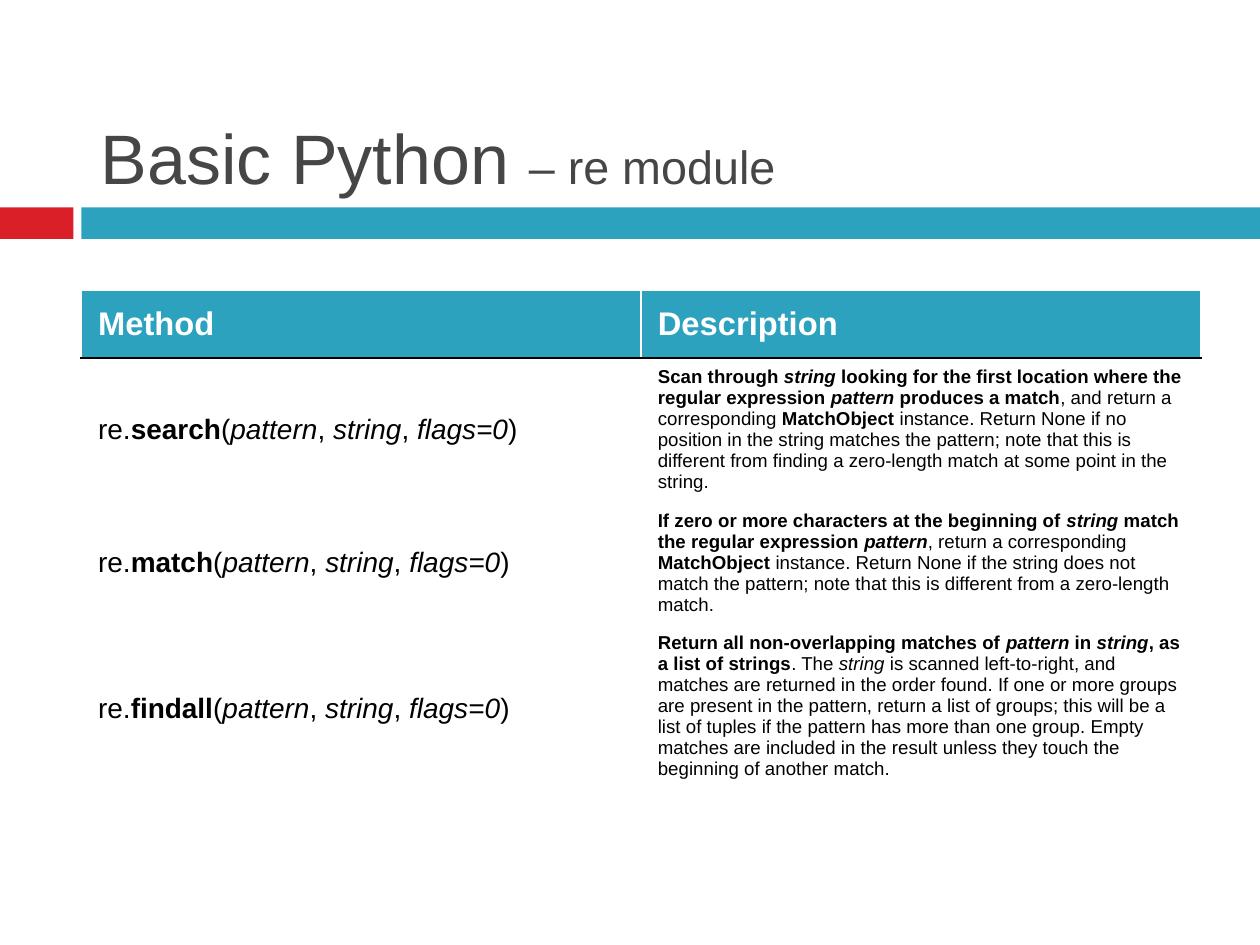
from lxml.etree import SubElement as Sub
from pptx import Presentation
from pptx.dml.color import RGBColor
from pptx.enum.shapes import MSO_SHAPE as Shape
from pptx.enum.text import MSO_ANCHOR as Anchor, MSO_AUTO_SIZE as Fit, PP_ALIGN as Align
from pptx.oxml.ns import qn
from pptx.util import Inches, Pt

RED = RGBColor(0xDA, 0x1F, 0x28)
TEAL = RGBColor(0x2D, 0xA2, 0xBF)
GREY = RGBColor(0x46, 0x46, 0x46)
BLACK = RGBColor(0, 0, 0)
WHITE = RGBColor(0xFF, 0xFF, 0xFF)

deck = Presentation()
deck.slide_width = Inches(7.5)
deck.slide_height = deck.slide_width * 3 // 4
slide = deck.slides.add_slide(deck.slide_layouts[5])


def area(x, y, w, h):
    wide, high = deck.slide_width / 100, deck.slide_height / 100
    return round(x * wide), round(y * high), round(w * wide), round(h * high)


def write(para, text, size=12, color=BLACK):
    for i, part in enumerate(text.split("*")):
        for j, bit in enumerate(part.split("_")):
            if bit:
                run = para.add_run()
                run.text = bit
                font = run.font
                font.name, font.size = "Arial", Pt(size)
                font.bold, font.italic = i % 2 == 1, j % 2 == 1
                font.color.rgb = color


LEFT = 6.45
for x, w, color in [(0, 5.83, RED), (LEFT, 100 - LEFT, TEAL)]:
    bar = slide.shapes.add_shape(Shape.RECTANGLE, *area(x, 21.96, w, 3.33))
    bar.shadow.inherit = False
    bar.fill.solid()
    bar.fill.fore_color.rgb = color
    bar.line.fill.background()

title = slide.shapes.title
title.left, title.top, title.width, title.height = area(6.67, 2.31, 89.2, 19.56)
frame = title.text_frame
frame.auto_size = Fit.NONE
frame.word_wrap = True
frame.vertical_anchor = Anchor.BOTTOM
head = frame.paragraphs[0]
head.alignment = Align.LEFT
write(head, "Basic Python ", size=30, color=GREY)
write(head, "– re module", size=20, color=GREY)

ARGS = "(_pattern_, _string_, _flags=0_)"
ROWS = [
    (7.11, "*Method*", "*Description*"),
    (15.3, "re.*search*" + ARGS,
     "*Scan through _string_ looking for the first location where the regular "
     "expression _pattern_ produces a match*, and return a corresponding "
     "*MatchObject* instance. Return None if no position in the string matches "
     "the pattern; note that this is different from finding a zero-length match "
     "at some point in the string."),
    (12.63, "re.*match*" + ARGS,
     "*If zero or more characters at the beginning of _string_ match the regular "
     "expression _pattern_*, return a corresponding *MatchObject* instance. "
     "Return None if the string does not match the pattern; note that this is "
     "different from a zero-length match."),
    (17.97, "re.*findall*" + ARGS,
     "*Return all non-overlapping matches of _pattern_ in _string_, as a list of "
     "strings*. The _string_ is scanned left-to-right, and matches are returned "
     "in the order found. If one or more groups are present in the pattern, "
     "return a list of groups; this will be a list of tuples if the pattern has "
     "more than one group. Empty matches are included in the result unless they "
     "touch the beginning of another match."),
]
high = sum(row[0] for row in ROWS)
table = slide.shapes.add_table(len(ROWS), 2, *area(LEFT, 30.74, 88.86, high)).table
table.horz_banding = False
for r, (share, *texts) in enumerate(ROWS):
    table.rows[r].height = area(0, 0, 0, share)[3]
    for c, text in enumerate(texts):
        cell = table.cell(r, c)
        for side in "LRTB":
            dark = (r, side) in [(0, "B"), (1, "T")]
            edge = Sub(cell._tc.get_or_add_tcPr(), qn("a:ln" + side), w=str(Pt(1)))
            fill = Sub(edge, qn("a:solidFill"))
            Sub(fill, qn("a:srgbClr"), val=str(BLACK if dark else WHITE))
        if r == 0:
            cell.fill.solid()
            cell.fill.fore_color.rgb = TEAL
        else:
            cell.fill.background()
        cell.vertical_anchor = Anchor.TOP if r and c else Anchor.MIDDLE
        size = 14 if r == 0 else (12, 8)[c]
        write(cell.text_frame.paragraphs[0], text, size=size, color=BLACK if r else WHITE)

deck.save("out.pptx")
